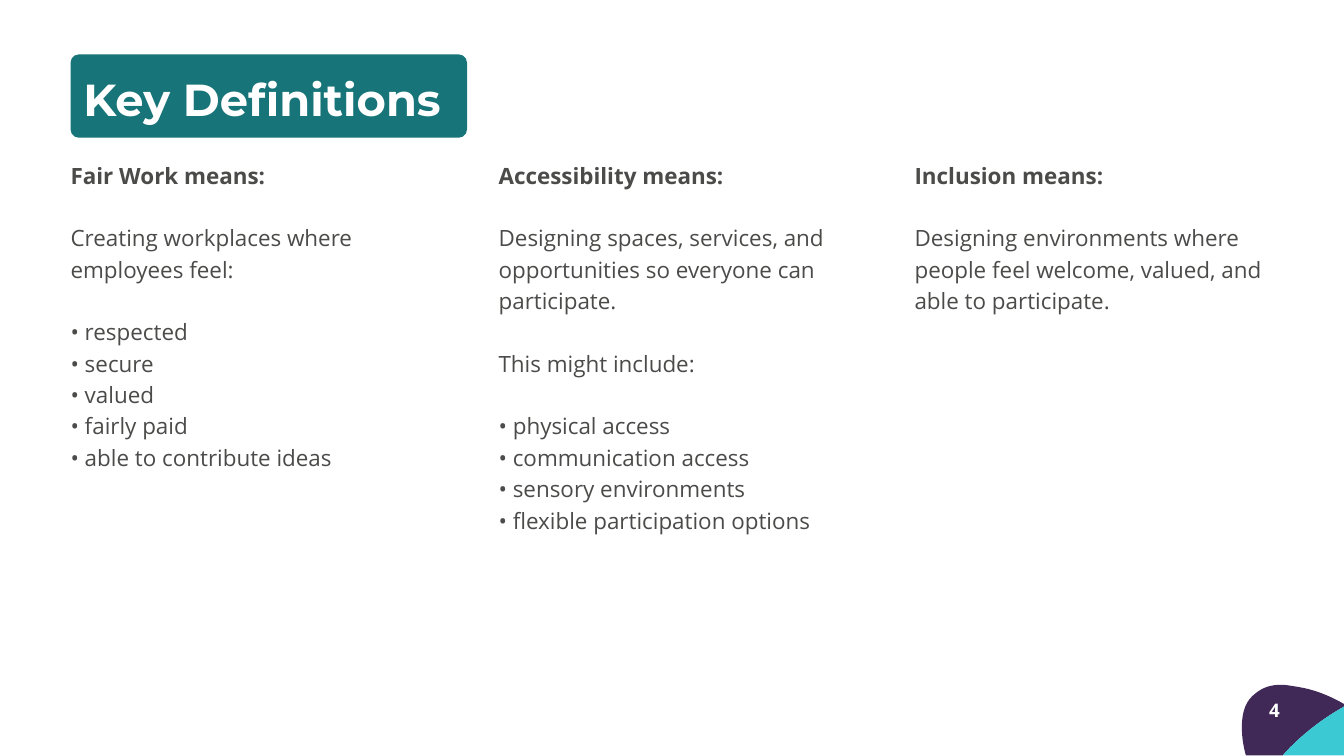
import pptx
import pptx.util
import pptx.dml.color
import pptx.enum.shapes
import pptx.enum.text
import pptx.oxml.ns
import lxml.etree

PX = 9144  # EMU in one px, 100 px to the inch
THEME = {
    "teal": "177478", "plum": "402957", "aqua": "3BC9D4",
    "ink": "4B4B4A", "white": "FFFFFF",
    "head": "Montserrat", "body": "Open Sans",
    "title": 48, "text": 24, "page": 20,
    "lead": 1.4,
}
Pt = pptx.util.Pt
RGB = pptx.dml.color.RGBColor.from_string

deck = pptx.Presentation()
deck.slide_width, deck.slide_height = 2000 * PX, 1125 * PX
shapes = deck.slides.add_slide(deck.slide_layouts[6]).shapes


def draw(start, legs, color):
    """Draw an outline; a leg of one point is a line, of three a Bezier curve."""
    pen = shapes.build_freeform(*start, scale=PX)
    pen.add_line_segments([pt for leg in legs for pt in leg], close=True)
    part = pen.convert_to_shape()
    lines = iter(part._element.findall(".//" + pptx.oxml.ns.qn("a:lnTo")))
    for leg in legs:
        group = [next(lines) for pt in leg]
        if len(leg) == 3:
            curve = lxml.etree.Element(pptx.oxml.ns.qn("a:cubicBezTo"))
            group[0].addprevious(curve)
            for line in group:
                curve.append(line[0])
                line.getparent().remove(line)
    paint(part, color)


def paint(part, color):
    part.shadow.inherit = False
    part.fill.solid()
    part.fill.fore_color.rgb = RGB(THEME[color])
    part.line.fill.background()


# Corner leaf in two colours that meet along the rib
rib = [
    [(1912, 1120), (1916, 1116), (1920, 1112)],
    [(1943, 1089), (1969, 1069), (1999, 1052)],
    [(2003, 1049)],
]
draw((1906, 1019), [
    [(1891, 1019), (1879, 1023), (1868, 1032)],
    [(1855, 1042), (1848, 1057), (1848, 1082)],
    [(1848, 1096), (1850, 1110), (1854, 1124)],
    [(1909, 1124)],
    *rib,
    [(2001, 1049), (2000, 1048), (1999, 1047)],
    [(1969, 1030), (1946, 1024), (1924, 1021)],
    [(1918, 1020), (1912, 1019), (1906, 1019)],
], "plum")
draw((1909, 1124), [*rib, [(2003, 1124)]], "aqua")

# Title plate
plate = shapes.add_shape(pptx.enum.shapes.MSO_SHAPE.ROUNDED_RECTANGLE,
                         105 * PX, 81 * PX, 590 * PX, 124 * PX)
plate.adjustments[0] = 0.1
paint(plate, "teal")

# Each text: box, size, face, colour, then lines as (text, gap above)
blocks = [
    ((124, 93, 1209, 89), "title", "head", "white", [("Key Definitions", False)]),
    ((105, 234, 590, 502), "text", "body", "ink", [
        ("Fair Work means:", False),
        ("Creating workplaces where employees feel:", True),
        ("• respected", True),
        ("• secure", False),
        ("• valued", False),
        ("• fairly paid", False),
        ("• able to contribute ideas", False),
    ]),
    ((742, 234, 590, 548), "text", "body", "ink", [
        ("Accessibility means:", False),
        ("Designing spaces, services, and opportunities so everyone can participate.", True),
        ("This might include:", True),
        ("• physical access", True),
        ("• communication access", False),
        ("• sensory environments", False),
        ("• flexible participation options", False),
    ]),
    ((1361, 234, 590, 273), "text", "body", "ink", [
        ("Inclusion means:", False),
        ("Designing environments where people feel welcome, valued, and able to participate.",
         True),
    ]),
    ((1888, 1034, 17, 22), "page", "body", "white", [("4", False)]),
]
for box, size, face, color, lines in blocks:
    frame = shapes.add_textbox(*(v * PX for v in box)).text_frame
    frame.margin_left = frame.margin_right = frame.margin_top = frame.margin_bottom = 0
    frame.word_wrap = size != "page"
    frame.auto_size = pptx.enum.text.MSO_AUTO_SIZE.SHAPE_TO_FIT_TEXT
    frame.text = "\n".join(text for text, gap in lines)
    lead = Pt(THEME[size] * THEME["lead"])
    for i, (para, (text, gap)) in enumerate(zip(frame.paragraphs, lines)):
        para.line_spacing = lead
        if gap:
            para.space_before = lead
        if size == "page":
            para.alignment = pptx.enum.text.PP_ALIGN.CENTER
        font = para.runs[0].font
        font.name, font.size = THEME[face], Pt(THEME[size])
        font.bold = i == 0
        font.color.rgb = RGB(THEME[color])

deck.save("out.pptx")
